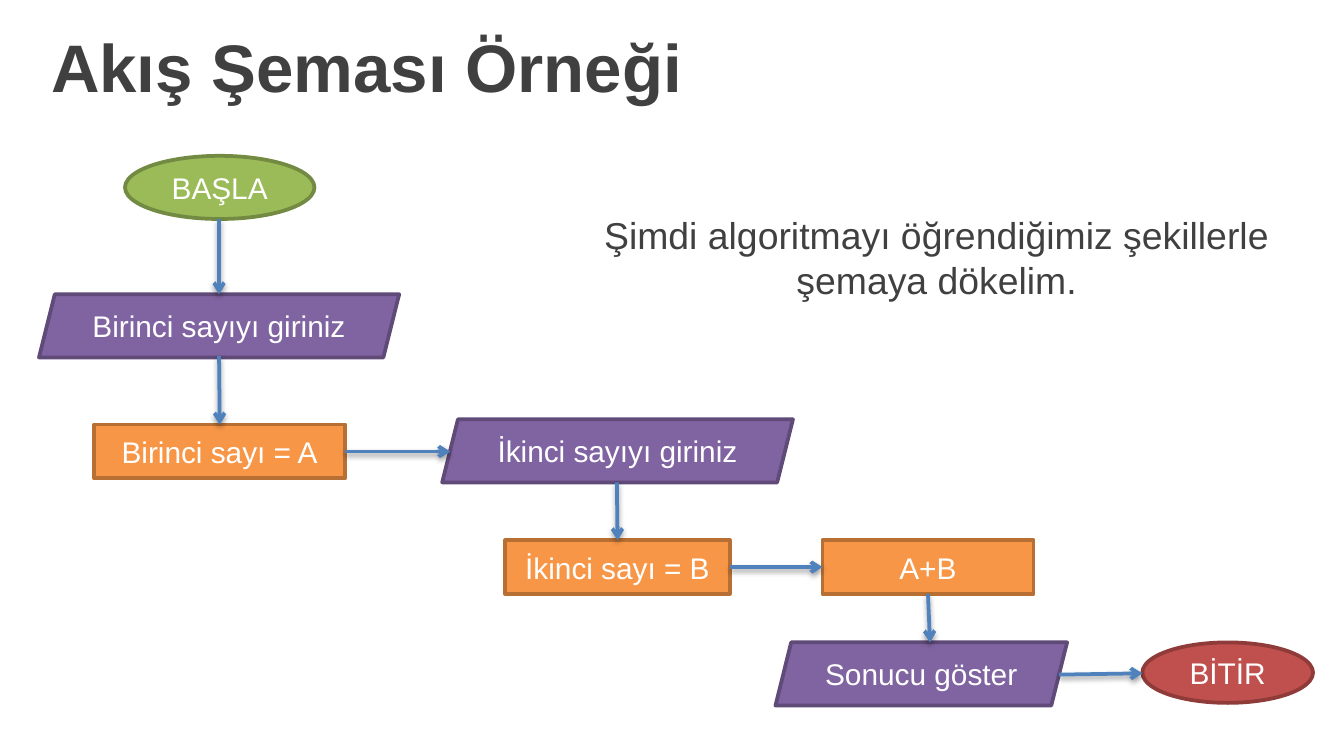
from lxml import etree
from pptx import Presentation
from pptx.dml.color import RGBColor
from pptx.enum.shapes import MSO_CONNECTOR, MSO_SHAPE as SHAPE
from pptx.enum.text import MSO_ANCHOR, PP_ALIGN
from pptx.oxml.ns import qn
from pptx.util import Inches, Pt

DARK = RGBColor(0x40, 0x40, 0x40)
WHITE = RGBColor(0xFF, 0xFF, 0xFF)
BLUE = RGBColor(0x4F, 0x81, 0xBD)
GREEN = RGBColor(0x9B, 0xBB, 0x59)
GREEN_EDGE = RGBColor(0x73, 0x8A, 0x42)
PURPLE = RGBColor(0x80, 0x64, 0xA2)
PURPLE_EDGE = RGBColor(0x5F, 0x4A, 0x78)
RED = RGBColor(0xC0, 0x50, 0x4D)
RED_EDGE = RGBColor(0x8E, 0x3B, 0x39)
ORANGE = RGBColor(0xF7, 0x96, 0x46)
ORANGE_EDGE = RGBColor(0xB7, 0x6F, 0x34)

START = (SHAPE.OVAL, GREEN, GREEN_EDGE)
END = (SHAPE.OVAL, RED, RED_EDGE)
INPUT = (SHAPE.PARALLELOGRAM, PURPLE, PURPLE_EDGE)
STEP = (SHAPE.RECTANGLE, ORANGE, ORANGE_EDGE)
TOP, LEFT, BOTTOM, RIGHT = range(4)


def write(sp, text, size=16, color=WHITE, bold=False, align=PP_ALIGN.CENTER):
    tf = sp.text_frame
    tf.word_wrap = True
    tf.vertical_anchor = MSO_ANCHOR.MIDDLE
    p = tf.paragraphs[0]
    p.alignment = align
    p.space_before = Pt(0)
    r = p.add_run()
    r.text = text
    r.font.name = "Arial"
    r.font.size = Pt(size)
    r.font.bold = bold
    r.font.color.rgb = color
    return p


prs = Presentation()
prs.slide_width = Inches(10)
prs.slide_height = Inches(10 * 9 / 16)
s = prs.slides.add_slide(prs.slide_layouts[1])

title, body = s.placeholders
for sp, box in ((title, (0.28, 0, 9.72, 0.97)), (body, (4.33, 1.28, 5.28, 1.26))):
    sp.left, sp.top, sp.width, sp.height = map(Inches, box)
write(title, "Akış Şeması Örneği", size=36, color=DARK, bold=True, align=PP_ALIGN.LEFT)
p = write(body, "Şimdi algoritmayı öğrendiğimiz şekillerle şemaya dökelim.", size=20, color=DARK)
pPr = p._p.get_or_add_pPr()
pPr.set("marL", "0")
pPr.set("indent", "0")
etree.SubElement(pPr, qn("a:buNone"))

# Flowchart nodes: text, kind, left, top, width, height
nodes = {}
for text, (kind, fill, edge), *box in (
    ("BAŞLA", START, 0.93, 1.16, 1.41, 0.47),
    ("Birinci sayıyı giriniz", INPUT, 0.29, 2.19, 2.68, 0.47),
    ("Birinci sayı = A", STEP, 0.7, 3.16, 1.87, 0.4),
    ("İkinci sayıyı giriniz", INPUT, 3.29, 3.12, 2.61, 0.47),
    ("İkinci sayı = B", STEP, 3.76, 4.02, 1.67, 0.4),
    ("A+B", STEP, 6.12, 4.02, 1.57, 0.4),
    ("Sonucu göster", INPUT, 5.77, 4.78, 2.17, 0.47),
    ("BİTİR", END, 8.5, 4.78, 1.27, 0.45),
):
    sp = s.shapes.add_shape(kind, *map(Inches, box))
    sp.shadow.inherit = False
    sp.fill.solid()
    sp.fill.fore_color.rgb = fill
    sp.line.color.rgb = edge
    sp.line.width = Pt(2)
    write(sp, text)
    nodes[text] = sp

# Arrows: ends, then the rectangle side joined at the beginning and at the end
for ends, begin, end in (
    ((1.63, 1.63, 1.63, 2.19), None, None),
    ((1.63, 2.65, 1.63, 3.16), None, ("Birinci sayı = A", TOP)),
    ((2.57, 3.36, 3.35, 3.36), ("Birinci sayı = A", RIGHT), None),
    ((4.59, 3.59, 4.59, 4.02), None, ("İkinci sayı = B", TOP)),
    ((5.43, 4.22, 6.12, 4.22), ("İkinci sayı = B", RIGHT), ("A+B", LEFT)),
    ((6.91, 4.43, 6.92, 4.78), ("A+B", BOTTOM), None),
    ((7.88, 5.02, 8.5, 5.01), None, None),
):
    arrow = s.shapes.add_connector(MSO_CONNECTOR.STRAIGHT, *map(Inches, ends))
    if begin:
        arrow.begin_connect(nodes[begin[0]], begin[1])
    if end:
        arrow.end_connect(nodes[end[0]], end[1])
    arrow.line.color.rgb = BLUE
    arrow.line.width = Pt(2)
    etree.SubElement(arrow.line._get_or_add_ln(), qn("a:tailEnd"), type="arrow")
    effects = etree.SubElement(arrow._element.spPr, qn("a:effectLst"))
    shadow = etree.SubElement(
        effects, qn("a:outerShdw"), blurRad=str(Pt(3.1)), dist=str(Pt(1.6)),
        dir="5400000", rotWithShape="0",
    )
    black = etree.SubElement(shadow, qn("a:srgbClr"), val="000000")
    etree.SubElement(black, qn("a:alpha"), val="38000")

prs.save("out.pptx")
